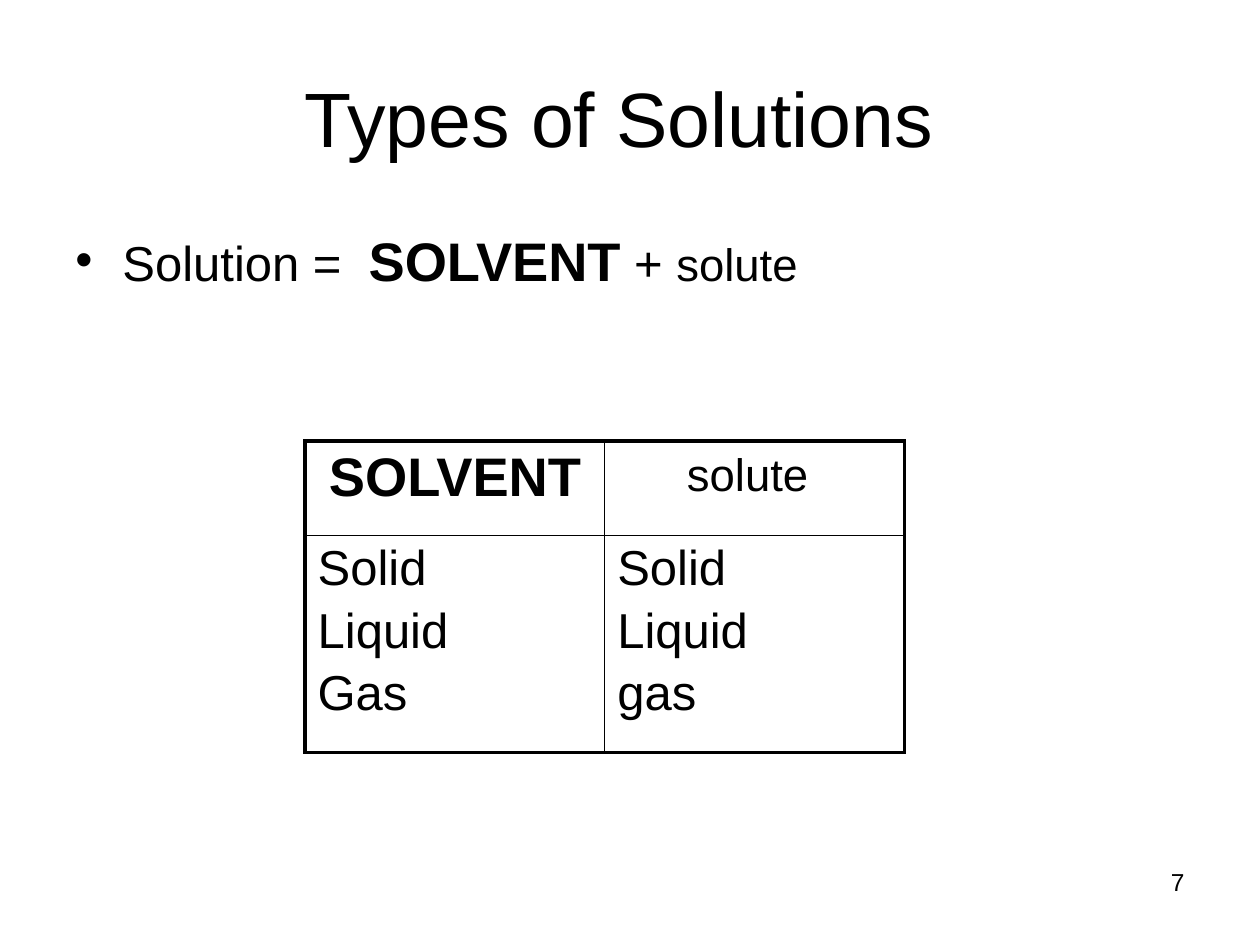
from lxml import etree
from pptx import Presentation
from pptx.dml.color import RGBColor
from pptx.enum.text import MSO_ANCHOR, PP_ALIGN
from pptx.oxml.ns import qn
from pptx.util import Cm, Pt

BLACK = RGBColor(0, 0, 0)
LEFT, CENTER, RIGHT = PP_ALIGN.LEFT, PP_ALIGN.CENTER, PP_ALIGN.RIGHT
TOP, MIDDLE = MSO_ANCHOR.TOP, MSO_ANCHOR.MIDDLE
THICK, THIN = Pt(2.25), Pt(1)


def write_line(para, spans, align=LEFT, before=0):
    """Fill a paragraph with (text, size, bold) spans."""
    para.alignment = align
    para.space_before = Pt(before)
    for text, size, bold in spans:
        span = para.add_run()
        span.text = text
        span.font.name = "Arial"
        span.font.size = Pt(size)
        span.font.bold = bold
        span.font.color.rgb = BLACK


def add_text(left, top, width, height, spans, anchor=TOP, **line_format):
    """Add a wrapped text box with one line and return its paragraph."""
    box = page.shapes.add_textbox(Cm(left), Cm(top), Cm(width), Cm(height))
    box.text_frame.word_wrap = True
    box.text_frame.vertical_anchor = anchor
    para = box.text_frame.paragraphs[0]
    write_line(para, spans, **line_format)
    return para


deck = Presentation()
deck.slide_width, deck.slide_height = Cm(25.4), Cm(19.05)
page = deck.slides.add_slide(deck.slide_layouts[6])

# Page number and title
add_text(18.2, 17.35, 5.93, 1.32, [("7", 14, False)], align=RIGHT)
add_text(1.27, 0.76, 22.86, 3.18, [("Types of Solutions ", 44, False)],
         anchor=MIDDLE, align=CENTER)

# Bulleted definition
definition = add_text(1.27, 4.45, 21.17, 3.6, [
    ("Solution =  ", 28, False), ("SOLVENT", 31, True), (" + ", 28, False),
    ("solute", 26, False), (" ", 28, False)], before=4.5)
properties = definition._p.get_or_add_pPr()
properties.set("marL", str(Cm(0.95)))
properties.set("indent", str(-Cm(0.95)))
etree.SubElement(properties, qn("a:buFont"), typeface="Arial")
etree.SubElement(properties, qn("a:buChar"), char="•")

# Table of solvent and solute states
rows = [
    [[[("SOLVENT", 31, True)]], [[("solute", 26, False), (" ", 28, False)]]],
    [[[(state, 28, False)] for state in states]
     for states in (("Solid", "Liquid", "Gas"), ("Solid", "Liquid", "gas"))],
]
table = page.shapes.add_table(2, 2, Cm(6.15), Cm(8.89), Cm(12.08), Cm(6.28)).table
table.first_row = table.horz_banding = False
for column in table.columns:
    column.width = Cm(6.04)
for row, height in zip(table.rows, (1.9, 4.38)):
    row.height = Cm(height)

for r, row in enumerate(rows):
    for c, lines in enumerate(row):
        cell = table.cell(r, c)
        cell.fill.background()
        frame = cell.text_frame
        for i, spans in enumerate(lines):
            para = frame.paragraphs[0] if i == 0 else frame.add_paragraph()
            write_line(para, spans, align=LEFT if r else CENTER, before=4.5)

        # Thick outer frame, thin inner rules; borders precede the fill
        outer = {"a:lnL": c == 0, "a:lnR": c == 1, "a:lnT": r == 0, "a:lnB": r == 1}
        cell_properties = cell._tc.get_or_add_tcPr()
        for i, (side, is_outer) in enumerate(outer.items()):
            border = etree.Element(qn(side), w=str(THICK if is_outer else THIN))
            fill = etree.SubElement(border, qn("a:solidFill"))
            etree.SubElement(fill, qn("a:srgbClr"), val=str(BLACK))
            cell_properties.insert(i, border)

deck.save("out.pptx")
